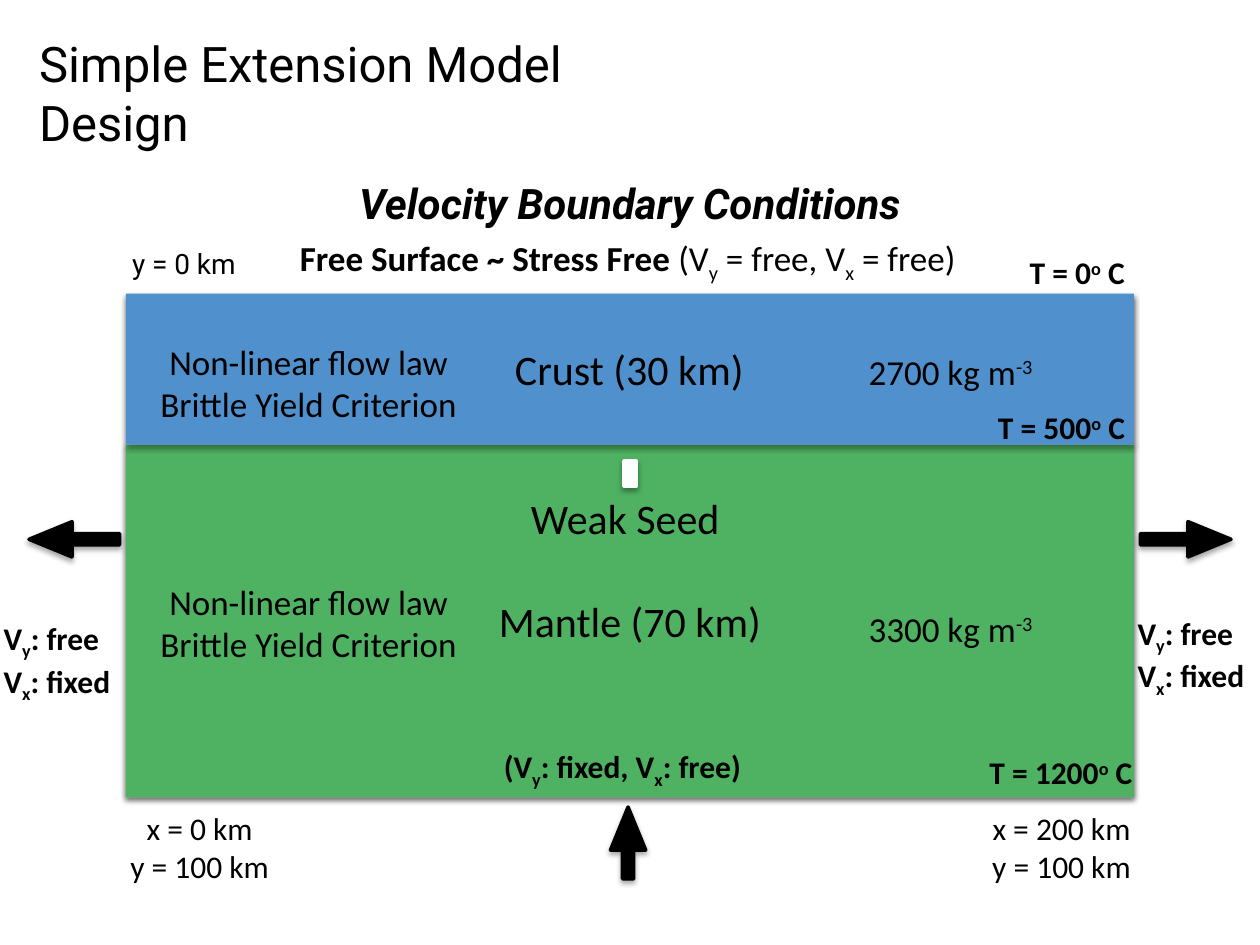
from dataclasses import dataclass
from typing import NamedTuple

from lxml import etree
from pptx import Presentation
from pptx import util as u
from pptx.dml.color import RGBColor
from pptx.enum import shapes, text
from pptx.oxml import ns

Inches = u.Inches


@dataclass(frozen=True)
class Theme:
    black: str = "000000"
    white: str = "FFFFFF"
    crust: str = "5091CD"
    mantle: str = "4FB162"
    body: str = "Calibri"
    display: str = "Roboto"
    title: int = 28
    heading: int = 24
    detail: int = 20
    label: int = 18
    small: int = 16


THEME = Theme()
CENTER, LEFT = text.PP_ALIGN.CENTER, text.PP_ALIGN.LEFT


class Span(NamedTuple):
    text: str
    baseline: int = 0
    bold: bool | None = None


@dataclass(frozen=True)
class Label:
    lines: list[list[Span]]
    box: tuple[float, float, float, float]
    size: int = THEME.label
    font: str = THEME.body
    bold: bool = False
    italic: bool = False
    align: text.PP_ALIGN = CENTER
    inset: float = 0.05
    spacing: float | None = None
    anchor: text.MSO_ANCHOR = text.MSO_ANCHOR.TOP


@dataclass(frozen=True)
class Block:
    box: tuple[float, float, float, float]
    fill: str
    outlined: bool = False
    arrow: bool = False
    rotation: int = 0


def plain(*lines: str) -> list[list[Span]]:
    return [[Span(line)] for line in lines]


def sub(letter: str) -> Span:
    return Span(letter, -25)


def sup(letter: str) -> Span:
    return Span(letter, 30)


def temperature(degrees: int) -> list[list[Span]]:
    return [[Span(f"T = {degrees}"), sup("o"), Span(" C")]]


def density(value: int) -> list[list[Span]]:
    return [[Span(f"{value} kg m"), sup("-3")]]


def add_shadow(sp) -> None:
    """Give the shape a soft shadow straight below it."""
    sp.shadow.inherit = False
    effects = sp._element.spPr.find(ns.qn("a:effectLst"))
    shadow = etree.SubElement(effects, ns.qn("a:outerShdw"), blurRad=str(u.Pt(3)),
                              dist=str(u.Pt(1.8)), dir="5400000", rotWithShape="0")
    color = etree.SubElement(shadow, ns.qn("a:srgbClr"), val=THEME.black)
    etree.SubElement(color, ns.qn("a:alpha"), val="35000")


def add_block(s, block: Block) -> None:
    kind = shapes.MSO_SHAPE.RIGHT_ARROW if block.arrow else shapes.MSO_SHAPE.RECTANGLE
    sp = s.shapes.add_shape(kind, *map(Inches, block.box))
    sp.rotation = block.rotation
    if block.arrow:
        sp.adjustments[0], sp.adjustments[1] = 0.32, 1.22
    sp.fill.solid()
    sp.fill.fore_color.rgb = RGBColor.from_string(block.fill)
    if block.outlined:
        sp.line.color.rgb = RGBColor.from_string(block.fill)
        sp.line.width = u.Pt(2)
    else:
        sp.line.fill.background()
    add_shadow(sp)


def add_label(s, label: Label) -> None:
    tf = s.shapes.add_textbox(*map(Inches, label.box)).text_frame
    tf.word_wrap = True
    tf.vertical_anchor = label.anchor
    tf.margin_left = tf.margin_right = Inches(label.inset)
    tf.margin_top = tf.margin_bottom = Inches(0.05)
    for i, line in enumerate(label.lines):
        p = tf.add_paragraph() if i else tf.paragraphs[0]
        p.alignment = label.align
        p.line_spacing = label.spacing
        for span in line:
            r = p.add_run()
            r.text = span.text
            r.font.size = u.Pt(label.size)
            r.font.name = label.font
            r.font.bold = label.bold if span.bold is None else span.bold
            r.font.italic = label.italic
            r.font.color.rgb = RGBColor.from_string(THEME.black)
            if span.baseline:
                r.font._element.set("baseline", str(span.baseline * 1000))


FLOW_LAW = plain("Non-linear flow law", "Brittle Yield Criterion")
SIDE_VELOCITY = [[Span("V"), sub("y"), Span(": free")],
                 [Span("V"), sub("x"), Span(": fixed")]]
BASE_VELOCITY = [[Span("(V"), sub("y"), Span(": fixed, V"), sub("x"), Span(": free)")]]
FREE_SURFACE = [[Span("Free Surface ~ Stress Free", bold=True), Span(" (V"), sub("y"),
                 Span(" = free, V"), sub("x"), Span(" = free)")]]

BLOCKS = [
    Block((1, 2.33, 8, 4), THEME.white),
    Block((1, 3.53, 8, 2.8), THEME.mantle),
    Block((1, 2.33, 8, 1.2), THEME.crust),
    Block((9.05, 4.14, 0.72, 0.28), THEME.black, outlined=True, arrow=True),
    Block((0.23, 4.14, 0.72, 0.28), THEME.black, outlined=True, arrow=True, rotation=180),
    Block((4.7, 6.55, 0.57, 0.28), THEME.black, outlined=True, arrow=True, rotation=270),
    Block((4.95, 3.66, 0.1, 0.2), THEME.white, outlined=True),
]

LABELS = [
    Label(plain("Simple Extension Model Design"), (0.26, 0.22, 5.51, 0.57),
          THEME.title, THEME.display, align=LEFT),
    Label(plain("Velocity Boundary Conditions"), (0, 1.15, 10, 0.72), THEME.heading,
          THEME.display, bold=True, italic=True, spacing=1.5,
          anchor=text.MSO_ANCHOR.MIDDLE),
    Label(FREE_SURFACE, (2.33, 1.83, 5.4, 0.44), THEME.detail, align=LEFT),
    Label(plain("y = 0 km"), (0.98, 1.91, 0.96, 0.37), THEME.small, THEME.display),
    Label(plain("x = 0 km", "y = 100 km"), (0.98, 6.37, 1.21, 0.71)),
    Label(plain("x = 200 km", "y = 100 km"), (7.82, 6.37, 1.21, 0.71)),
    Label(plain("Crust (30 km)"), (4.03, 2.68, 1.93, 0.5), THEME.heading),
    Label(plain("Mantle (70 km)"), (3.9, 4.68, 2.2, 0.5), THEME.heading),
    Label(plain("Weak Seed "), (4.15, 3.86, 1.7, 0.5), THEME.heading),
    Label(temperature(0), (8.11, 1.96, 0.88, 0.41), bold=True),
    Label(temperature(500), (7.86, 3.19, 1.13, 0.41), bold=True),
    Label(temperature(1200), (7.79, 5.93, 1.26, 0.41), bold=True),
    Label(FLOW_LAW, (1.2, 2.65, 2.5, 0.77), THEME.detail),
    Label(FLOW_LAW, (1.2, 4.56, 2.5, 0.77), THEME.detail),
    Label(density(2700), (6.83, 2.73, 1.43, 0.44), THEME.detail),
    Label(density(3300), (6.83, 4.77, 1.43, 0.44), THEME.detail),
    Label(BASE_VELOCITY, (3.9, 5.88, 2.13, 0.4), bold=True, align=LEFT, inset=0.1),
    Label(SIDE_VELOCITY, (-0.07, 4.86, 1.07, 0.71), bold=True, align=LEFT, inset=0.1),
    Label(SIDE_VELOCITY, (8.93, 4.82, 1.07, 0.71), bold=True, align=LEFT, inset=0.1),
]


def main() -> None:
    prs = Presentation()
    prs.slide_width, prs.slide_height = Inches(10), Inches(7.5)
    s = prs.slides.add_slide(prs.slide_layouts[6])
    for block in BLOCKS:
        add_block(s, block)
    for label in LABELS:
        add_label(s, label)
    prs.save("out.pptx")


if __name__ == "__main__":
    main()
